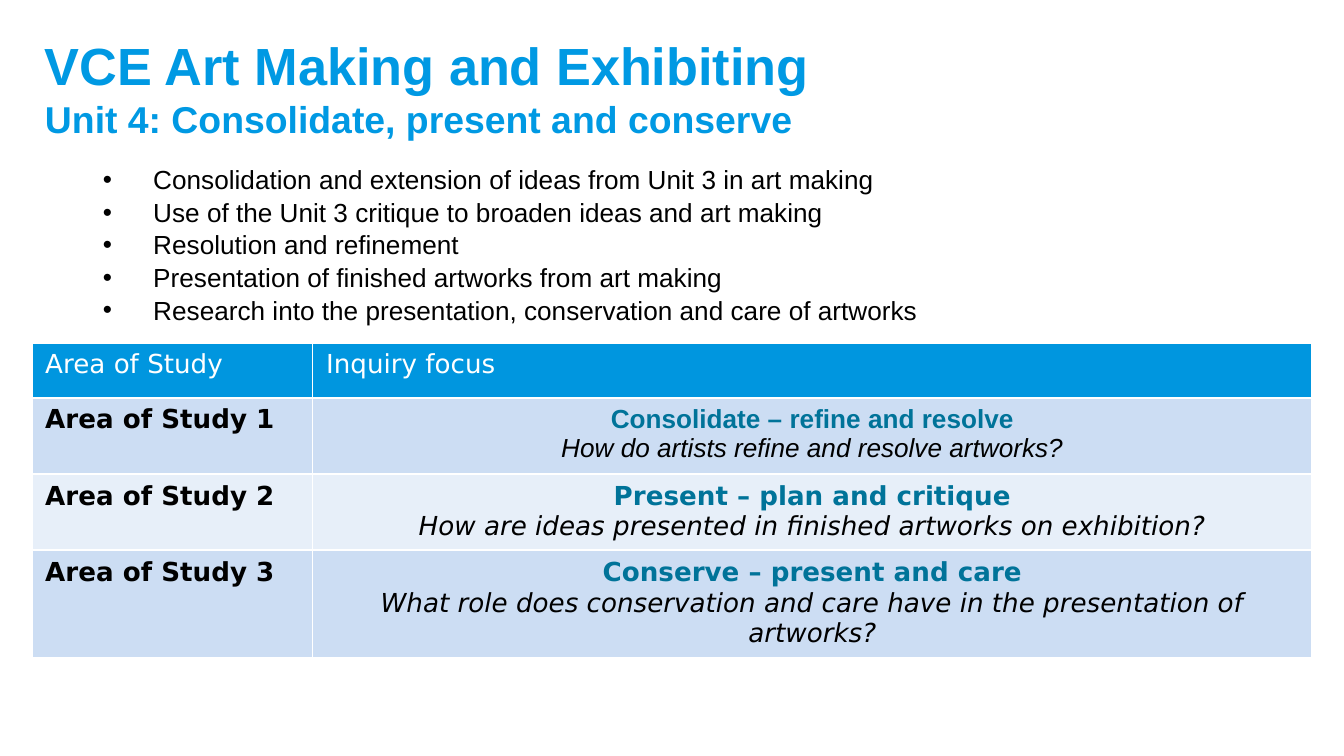
from dataclasses import dataclass

from lxml import etree
from pptx import Presentation
from pptx import util as u
from pptx.dml.color import RGBColor
from pptx.enum import text
from pptx.oxml import ns


@dataclass(frozen=True)
class Theme:
    sans: str = "Arial"
    table_font: str = "DejaVu Sans"
    title: str = "0099E3"
    header: str = "0096DF"
    accent: str = "007399"
    ink: str = "000000"
    paper: str = "FFFFFF"
    bands: tuple[str, str] = ("CCDDF3", "E7EFF9")
    title_size: int = 28
    subtitle_size: int = 20
    body_size: int = 14


@dataclass(frozen=True)
class Study:
    focus: str
    question: str
    font: str


@dataclass(frozen=True)
class Box:
    left: float
    top: float
    width: float
    height: float


T = Theme()

TITLE = "VCE Art Making and Exhibiting\nUnit 4: Consolidate, present and conserve"
BULLETS = [
    "Consolidation and extension of ideas from Unit 3 in art making",
    "Use of the Unit 3 critique to broaden ideas and art making",
    "Resolution and refinement",
    "Presentation of finished artworks from art making",
    "Research into the presentation, conservation and care of artworks",
]
HEADERS = ["Area of Study", "Inquiry focus"]
STUDIES = [
    Study("Consolidate – refine and resolve",
          "How do artists refine and resolve artworks?", T.sans),
    Study("Present – plan and critique",
          "How are ideas presented in finished artworks on exhibition?", T.table_font),
    Study("Conserve – present and care",
          "What role does conservation and care have in the presentation of artworks?",
          T.table_font),
]
COLUMNS = [150.5, 535.5]
ROWS = [29.5, 29.5, 29.5, 21.6]


def style(r, font: str, size: int, color: str, bold: bool = False, italic: bool = False) -> None:
    r.font.name = font
    r.font.size = u.Pt(size)
    r.font.color.rgb = RGBColor.from_string(color)
    r.font.bold = bold
    r.font.italic = italic


def add_box(s, box: Box):
    sp = s.shapes.add_textbox(u.Pt(box.left), u.Pt(box.top), u.Pt(box.width), u.Pt(box.height))
    sp.text_frame.word_wrap = True
    return sp.text_frame


def add_title(s, box: Box) -> None:
    tf = add_box(s, box)
    tf.vertical_anchor = text.MSO_ANCHOR.MIDDLE
    p = tf.paragraphs[0]
    p.text = TITLE
    for r, size in zip(p.runs, (T.title_size, T.subtitle_size)):
        style(r, T.sans, size, T.title, bold=True)


def add_bullets(s, box: Box) -> None:
    tf = add_box(s, box)
    tf.text = "\n".join(BULLETS)
    for p in tf.paragraphs:
        pPr = p._p.get_or_add_pPr()
        pPr.set("marL", str(u.Pt(27)))
        pPr.set("indent", str(u.Pt(-27)))
        etree.SubElement(pPr, ns.qn("a:buFont"), typeface=T.sans)
        etree.SubElement(pPr, ns.qn("a:buChar"), char="•")
        p.line_spacing = 1.04
        style(p.runs[0], T.sans, T.body_size, T.ink)


def paint_cell(cell, color: str) -> None:
    tcPr = cell._tc.get_or_add_tcPr()
    for side in ("lnL", "lnR", "lnT", "lnB"):
        ln = etree.SubElement(tcPr, ns.qn(f"a:{side}"), w=str(u.Pt(1)))
        fill = etree.SubElement(ln, ns.qn("a:solidFill"))
        etree.SubElement(fill, ns.qn("a:srgbClr"), val=T.paper)
    cell.fill.solid()
    cell.fill.fore_color.rgb = RGBColor.from_string(color)


def fill_study(label, inquiry, number: int, study: Study) -> None:
    label.text_frame.text = f"Area of Study {number}"
    style(label.text_frame.paragraphs[0].runs[0], T.table_font, T.body_size, T.ink, bold=True)
    inquiry.text_frame.text = f"{study.focus}\n{study.question}"
    focus, question = inquiry.text_frame.paragraphs
    style(focus.runs[0], study.font, T.body_size, T.accent, bold=True)
    style(question.runs[0], study.font, T.body_size, T.ink, italic=True)
    for p in (focus, question):
        p.alignment = text.PP_ALIGN.CENTER
    for cell in (label, inquiry):
        paint_cell(cell, T.bands[(number - 1) % 2])


def add_study_table(s, box: Box) -> None:
    frame = s.shapes.add_table(len(ROWS), len(COLUMNS), u.Pt(box.left), u.Pt(box.top),
                               u.Pt(box.width), u.Pt(box.height))
    table = frame.table
    for column, width in zip(table.columns, COLUMNS):
        column.width = u.Pt(width)
    for row, height in zip(table.rows, ROWS):
        row.height = u.Pt(height)
    frame.height = u.Pt(box.height)
    for cell, header in zip(table.rows[0].cells, HEADERS):
        cell.text_frame.text = header
        style(cell.text_frame.paragraphs[0].runs[0], T.table_font, T.body_size, T.paper)
        paint_cell(cell, T.header)
    for number, study in enumerate(STUDIES, 1):
        fill_study(table.cell(number, 0), table.cell(number, 1), number, study)


def main() -> None:
    prs = Presentation()
    prs.slide_width, prs.slide_height = u.Pt(720), u.Pt(405)
    s = prs.slides.add_slide(prs.slide_layouts[6])
    add_title(s, Box(17, 15, 686, 63))
    add_bullets(s, Box(48, 83.5, 624, 92))
    add_study_table(s, Box(17, 183.6, 686, 152))
    prs.save("out.pptx")


if __name__ == "__main__":
    main()
